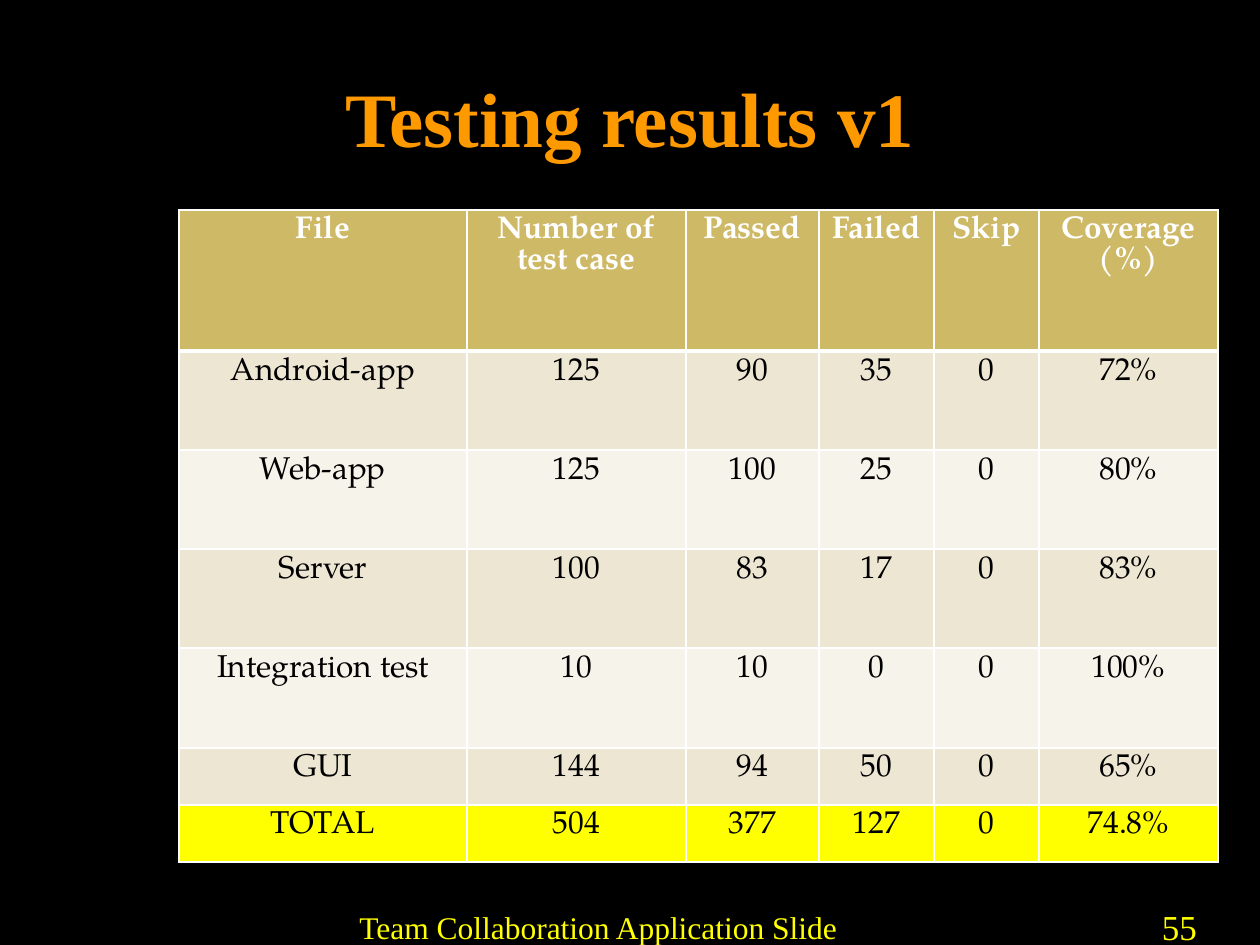
"""Builds the slide with the table of testing results."""
from lxml import etree
from pptx import Presentation
from pptx import util as u
from pptx.dml.color import RGBColor
from pptx.enum import text
from pptx.oxml.ns import qn

PX = 914400 / 126
COLORS = {
    "background": "000000", "title": "FF9900", "footer": "FFFF00",
    "header": "CEB966", "odd": "EDE6D3", "even": "F6F3EA",
    "total": "FFFF00", "border": "FFFFFF", "body": "000000",
}
WIDTHS = [288, 219, 133, 115, 105, 179]
HEIGHTS = [141, 99, 99, 99, 100, 57, 57]
ROWS = [
    ["File", "Number of test case", "Passed", "Failed", "Skip", "Coverage\n(%)"],
    ["Android-app", "125", "90", "35", "0", "72%"],
    ["Web-app", "125", "100", "25", "0", "80%"],
    ["Server", "100", "83", "17", "0", "83%"],
    ["Integration test", "10", "10", "0", "0", "100%"],
    ["GUI", "144", "94", "50", "0", "65%"],
    ["TOTAL", "504", "377", "127", "0", "74.8%"],
]
FOOTERS = [
    ("Team Collaboration Application Slide", 320, 902, 557, 50, 18, text.PP_ALIGN.CENTER, 13),
    ("55", 1092, 904, 105, 50, 20, text.PP_ALIGN.RIGHT, 0),
]


def px(*lengths):
    return [round(length * PX) for length in lengths]


def style(para, name, size, color, bold, align):
    para.alignment = align
    para.font.name = name
    para.font.size = u.Pt(size)
    para.font.bold = bold
    para.font.color.rgb = RGBColor.from_string(COLORS[color])


deck = Presentation()
deck.slide_width, deck.slide_height = px(1260, 945)
page = deck.slides.add_slide(deck.slide_layouts[5])
page.background.fill.solid()
page.background.fill.fore_color.rgb = RGBColor.from_string(COLORS["background"])

title = page.shapes.title
title.left, title.top, title.width, title.height = px(63, 38, 1134, 158)
title.text_frame.text = "Testing results v1"
title.text_frame.vertical_anchor = text.MSO_ANCHOR.MIDDLE
style(title.text_frame.paragraphs[0], "Times New Roman", 44, "title", True, text.PP_ALIGN.CENTER)

for words, left, top, width, height, size, align, inset in FOOTERS:
    box = page.shapes.add_textbox(*px(left, top, width, height))
    frame = box.text_frame
    frame.word_wrap = True
    frame.vertical_anchor = text.MSO_ANCHOR.BOTTOM
    frame.margin_left, frame.margin_right = px(inset, inset)
    frame.text = words
    style(frame.paragraphs[0], "Times New Roman", size, "footer", False, align)

table = page.shapes.add_table(
    len(ROWS), len(WIDTHS), *px(179, 210, sum(WIDTHS), sum(HEIGHTS))
).table
for column, width in zip(table.columns, px(*WIDTHS)):
    column.width = width
for row, height in zip(table.rows, px(*HEIGHTS)):
    row.height = height

for r, values in enumerate(ROWS):
    is_header = r == 0
    if is_header:
        fill = "header"
    elif r == len(ROWS) - 1:
        fill = "total"
    else:
        fill = "odd" if r % 2 else "even"
    for c, value in enumerate(values):
        cell = table.cell(r, c)
        cell.text = value
        for para in cell.text_frame.paragraphs:
            style(para, "TeX Gyre Pagella", 18, "border" if is_header else "body",
                  is_header, text.PP_ALIGN.CENTER)
        properties = cell._tc.get_or_add_tcPr()
        for side in ("lnL", "lnR", "lnT", "lnB"):
            thick = (r, side) in ((0, "lnB"), (1, "lnT"))
            line = etree.SubElement(properties, qn(f"a:{side}"), w=str(u.Pt(3 if thick else 1)))
            solid = etree.SubElement(line, qn("a:solidFill"))
            etree.SubElement(solid, qn("a:srgbClr"), val=COLORS["border"])
        cell.fill.solid()
        cell.fill.fore_color.rgb = RGBColor.from_string(COLORS[fill])

deck.save("out.pptx")
